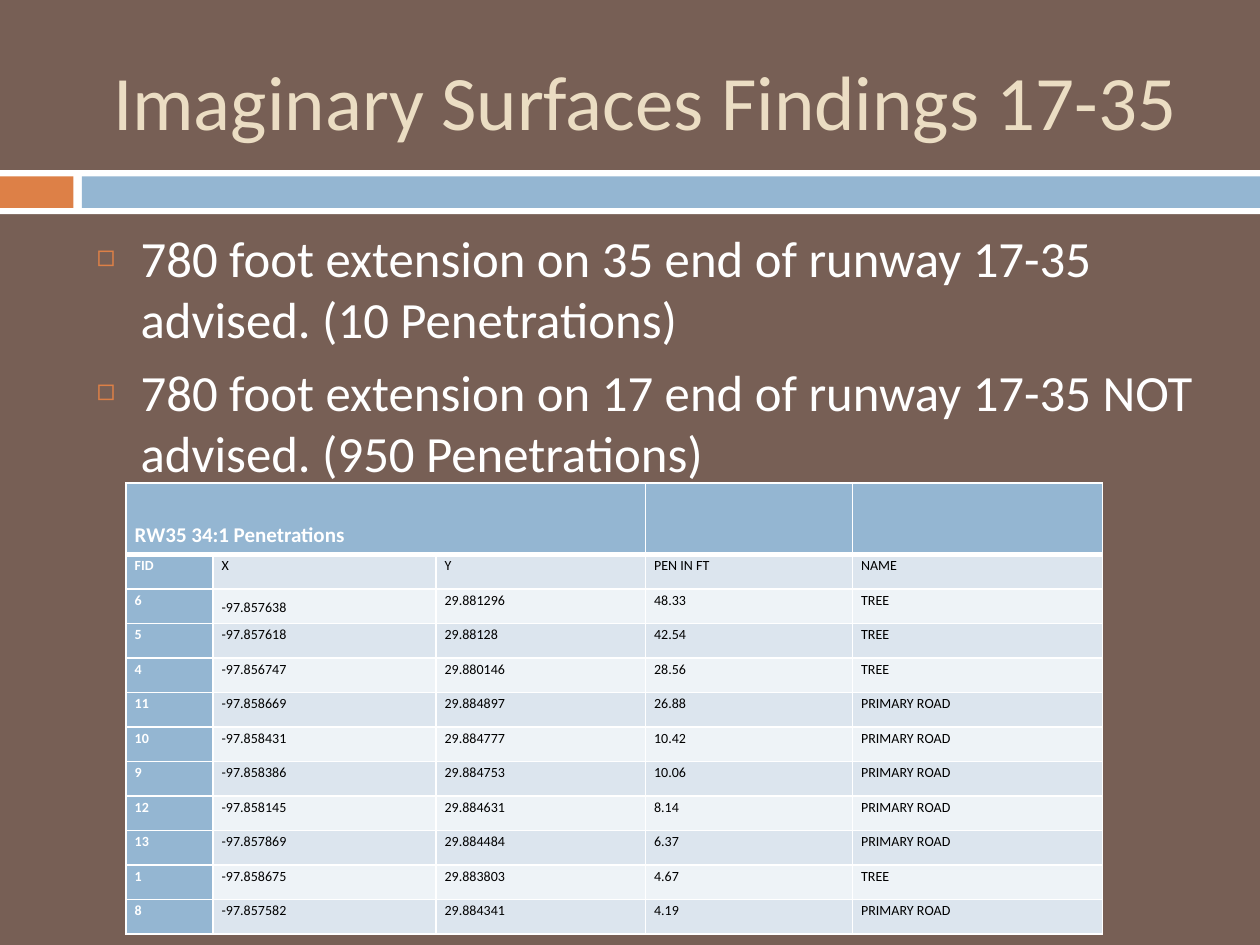
from dataclasses import dataclass

from lxml import etree
from pptx import Presentation
from pptx import util as u
from pptx.dml.color import RGBColor
from pptx.enum import shapes, text
from pptx.oxml.ns import qn


@dataclass(frozen=True)
class Theme:
    font: str = "Calibri"
    back: str = "775F55"
    blue: str = "94B6D2"
    rust: str = "DD8047"
    sand: str = "EBDDC3"
    white: str = "FFFFFF"
    black: str = "000000"
    bands: tuple = ("DCE5EE", "EEF3F7")
    title: float = 44
    body: float = 29
    head: float = 12
    cell: float = 8


def paint(fill, color):
    fill.solid()
    fill.fore_color.rgb = RGBColor.from_string(color)


class Deck:
    def __init__(self, theme):
        self.theme = theme
        self.prs = Presentation()
        self.prs.slide_width, self.prs.slide_height = u.Pt(720), u.Pt(540)
        self.slide = self.prs.slides.add_slide(self.prs.slide_layouts[1])
        paint(self.slide.background.fill, theme.back)

    def run(self, para, words, size, color, bold=False):
        run = para.add_run()
        run.text = words
        font = run.font
        font.name, font.size, font.bold = self.theme.font, u.Pt(size), bold
        font.color.rgb = RGBColor.from_string(color)

    def place(self, shape, box):
        shape.left, shape.top, shape.width, shape.height = map(u.Pt, box)
        shape.text_frame.auto_size = text.MSO_AUTO_SIZE.NONE
        return shape.text_frame

    def bar(self, box, color):
        shape = self.slide.shapes.add_shape(
            shapes.MSO_SHAPE.RECTANGLE, *map(u.Pt, box))
        shape.shadow.inherit = False
        paint(shape.fill, color)
        shape.line.fill.background()

    def title(self, words, box):
        frame = self.place(self.slide.shapes.title, box)
        frame.vertical_anchor = text.MSO_ANCHOR.MIDDLE
        para = frame.paragraphs[0]
        para.alignment = text.PP_ALIGN.CENTER
        self.run(para, words, self.theme.title, self.theme.sand)

    def bullets(self, items, box):
        frame = self.place(self.slide.placeholders[1], box)
        for num, item in enumerate(items):
            para = frame.add_paragraph() if num else frame.paragraphs[0]
            para.space_before = u.Pt(7)
            self.run(para, item, self.theme.body, self.theme.white)
            # Hanging indent and square bullet
            props = para._p.get_or_add_pPr()
            props.set("marL", str(u.Pt(25.2)))
            props.set("indent", str(u.Pt(-25.2)))
            color = etree.SubElement(props, qn("a:buClr"))
            etree.SubElement(color, qn("a:srgbClr"), val=self.theme.rust)
            etree.SubElement(props, qn("a:buSzPct"), val="60000")
            etree.SubElement(props, qn("a:buChar"), char="◻")

    def edges(self, cell, top=1, base=1):
        props = cell._tc.get_or_add_tcPr()
        widths = {"L": 1, "R": 1, "T": top, "B": base}
        for num, (side, width) in enumerate(widths.items()):
            line = etree.Element(qn("a:ln" + side), w=str(u.Pt(width)))
            fill = etree.SubElement(line, qn("a:solidFill"))
            etree.SubElement(fill, qn("a:srgbClr"), val=self.theme.white)
            props.insert(num, line)

    def fill(self, cell, words, size, color, bold):
        cell.margin_left = cell.margin_right = u.Pt(5)
        cell.margin_top = cell.margin_bottom = 0
        para = cell.text_frame.paragraphs[0]
        para.line_spacing = 1.15
        self.run(para, words, size, color, bold)

    def table(self, head, rows, box, cols, tall):
        look = self.theme
        grid = self.slide.shapes.add_table(
            len(rows) + 1, len(cols), *map(u.Pt, box)).table
        for col, width in zip(grid.columns, cols):
            col.width = u.Pt(width)
        # Header row, its first three cells merged
        grid.rows[0].height = u.Pt(tall)
        for cell in grid.rows[0].cells:
            paint(cell.fill, look.blue)
            self.edges(cell, base=3)
        first = grid.cell(0, 0)
        first.merge(grid.cell(0, 2))
        self.fill(first, head, look.head, look.white, True)
        first.vertical_anchor = text.MSO_ANCHOR.BOTTOM
        first.margin_bottom = u.Pt(3.6)
        # Banded rows with a blue key column
        for r, row in enumerate(rows, 1):
            grid.rows[r].height = u.Pt((box[3] - tall) / len(rows))
            for c, words in enumerate(row):
                cell, key = grid.cell(r, c), c == 0
                paint(cell.fill, look.blue if key else look.bands[(r - 1) % 2])
                self.edges(cell, top=3 if r == 1 else 1)
                self.fill(cell, words, look.cell,
                          look.white if key else look.black, key)
        return grid


ROWS = [
    ("FID", "X", "Y", "PEN IN FT", "NAME"),
    ("6", "-97.857638", "29.881296", "48.33", "TREE"),
    ("5", "-97.857618", "29.88128", "42.54", "TREE"),
    ("4", "-97.856747", "29.880146", "28.56", "TREE"),
    ("11", "-97.858669", "29.884897", "26.88", "PRIMARY ROAD"),
    ("10", "-97.858431", "29.884777", "10.42", "PRIMARY ROAD"),
    ("9", "-97.858386", "29.884753", "10.06", "PRIMARY ROAD"),
    ("12", "-97.858145", "29.884631", "8.14", "PRIMARY ROAD"),
    ("13", "-97.857869", "29.884484", "6.37", "PRIMARY ROAD"),
    ("1", "-97.858675", "29.883803", "4.67", "TREE"),
    ("8", "-97.857582", "29.884341", "4.19", "PRIMARY ROAD"),
]


def main():
    look = Theme()
    deck = Deck(look)

    # Band under the title
    deck.bar((0, 97.2, 720, 25.2), look.white)
    deck.bar((0, 100.8, 42, 18), look.rust)
    deck.bar((46.8, 100.8, 673.2, 18), look.blue)

    # Title and findings
    deck.title("Imaginary Surfaces Findings 17-35", (48, 18, 642, 78))
    deck.bullets([
        "780 foot extension on 35 end of runway 17-35 advised. "
        "(10 Penetrations)",
        "780 foot extension on 17 end of runway 17-35 NOT advised. "
        "(950 Penetrations)",
    ], (48, 126, 642, 354))

    # Penetration table
    grid = deck.table("RW35 34:1 Penetrations", ROWS, (72, 276, 558, 258),
                      (49.7, 127.4, 119.7, 118.3, 142.9), 41)
    grid.cell(2, 1).vertical_anchor = text.MSO_ANCHOR.MIDDLE

    deck.prs.save("out.pptx")


if __name__ == "__main__":
    main()
